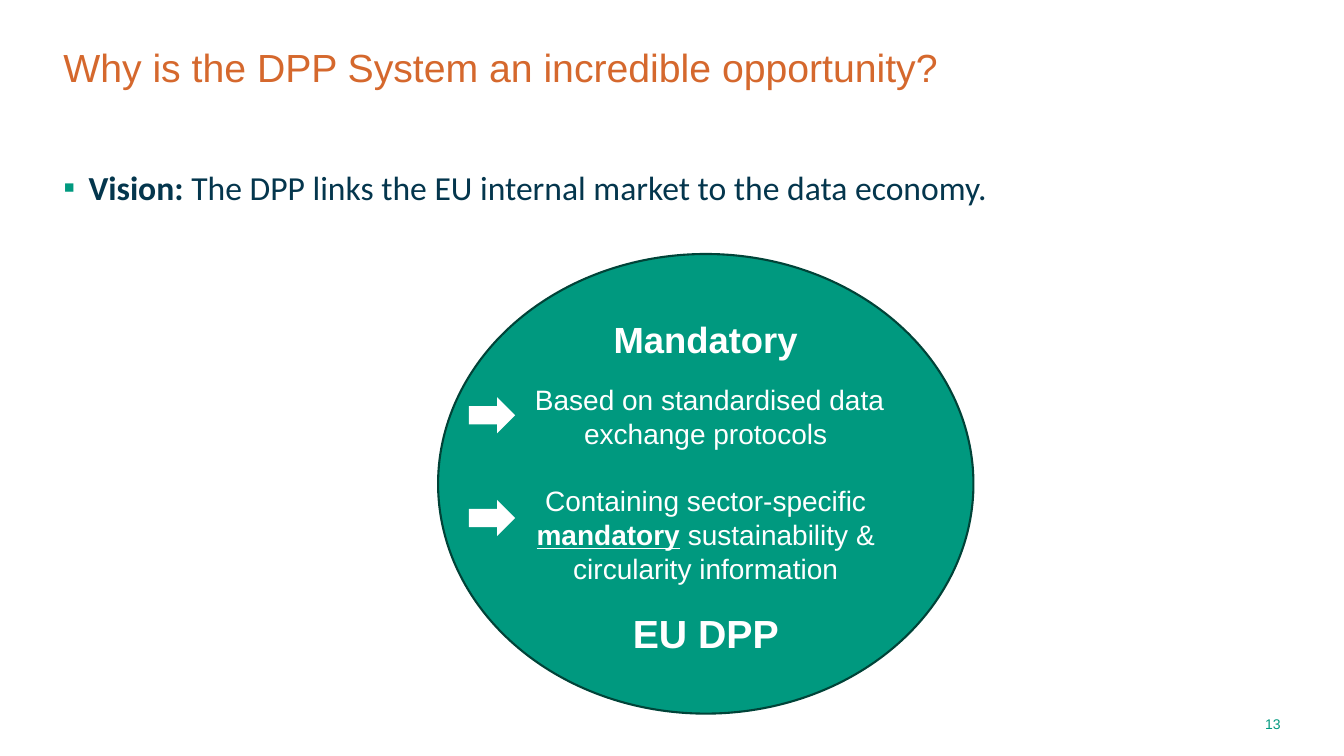
from lxml.etree import SubElement
from pptx import Presentation
from pptx.dml.color import RGBColor
from pptx.enum.shapes import MSO_SHAPE as Shape
from pptx.enum.text import MSO_ANCHOR as Anchor, PP_ALIGN as Align
from pptx.oxml.ns import qn
from pptx.util import Inches, Pt

WIDE, HIGH = 13.33, 7.5
GREEN, DARK, WHITE = "00997F", "004338", "FFFFFF"
ORANGE, NAVY = "D5682D", "04364D"
EDGE, RIGHT = 0.53, 12.8
MID = 7.0
BOLD = {"bold": True}
LINK = {"bold": True, "underline": True}

TITLE = [[("Why is the DPP System an incredible opportunity?", {})]]
VISION = [[("Vision:", BOLD),
           (" The DPP links the EU internal market to the data economy.", {})]]
POINTS = [
    [(" Based on standardised data exchange protocols", {})],
    [("Containing sector-specific ", {}), ("mandatory", LINK),
     (" sustainability & circularity information", {})],
]
PAGE = [[("13", {})]]
HEADS = [("Mandatory", 26, 3.1, 3.78), ("EU DPP", 28, 6.0, 3.2)]
ARROWS = {"left": 4.65, "top": 3.94, "step": 1.02, "size": (0.46, 0.36)}


def color(code):
    """Turn a hex string into a colour."""
    return RGBColor.from_string(code)


def write(shape, paras, size, code, face="Arial", align=Align.LEFT,
          anchor=Anchor.TOP, line=None, gap=0):
    """Fill a shape with formatted paragraphs."""
    frame = shape.text_frame
    frame.word_wrap, frame.vertical_anchor = True, anchor
    for row, runs in enumerate(paras):
        para = frame.add_paragraph() if row else frame.paragraphs[0]
        para.alignment = align
        if line:
            para.line_spacing = line
        if row:
            para.space_before = Pt(gap)
        for text, extra in runs:
            run = para.add_run()
            run.text = text
            run.font.color.rgb = color(code)
            look = {"name": face, "size": Pt(size), **extra}
            for key, value in look.items():
                setattr(run.font, key, value)
    return frame


def label(slide, box, *args, **look):
    """Add a text box with formatted paragraphs."""
    return write(slide.shapes.add_textbox(*map(Inches, box)), *args, **look)


def solid(slide, kind, box, fill, edge=None):
    """Add a filled preset shape."""
    shape = slide.shapes.add_shape(kind, *map(Inches, box))
    shape.shadow.inherit = False
    shape.fill.solid()
    shape.fill.fore_color.rgb = color(fill)
    if edge:
        shape.line.color.rgb = color(edge)
        shape.line.width = Pt(1.5)
    else:
        shape.line.fill.background()
    return shape


def bullet(para, mark, code, indent):
    """Give a paragraph a coloured hanging bullet."""
    props = para._p.get_or_add_pPr()
    props.set("marL", str(Inches(indent)))
    props.set("indent", str(-Inches(indent)))
    tint = SubElement(props, qn("a:buClr"))
    SubElement(tint, qn("a:srgbClr")).set("val", code)
    SubElement(props, qn("a:buFont")).set("typeface", "Arial")
    SubElement(props, qn("a:buChar")).set("char", mark)


def main():
    """Build and save the slide."""
    deck = Presentation()
    deck.slide_width, deck.slide_height = Inches(WIDE), Inches(HIGH)
    slide = deck.slides.add_slide(deck.slide_layouts[6])

    label(slide, (RIGHT - 0.48, 7.06, 0.48, 0.25), PAGE, 10, GREEN,
          align=Align.RIGHT, anchor=Anchor.MIDDLE)
    label(slide, (EDGE, 0.43, 9.95, 0.92), TITLE, 28, ORANGE, line=0.9)
    body = label(slide, (EDGE, 1.65, RIGHT - EDGE, 0.46), VISION, 24, NAVY,
                 face="Calibri", line=0.9)
    bullet(body.paragraphs[0], "▪", GREEN, 0.25)

    wide = 5.31
    disc = solid(slide, Shape.OVAL, (MID - wide / 2, 2.52, wide, 4.56),
                 GREEN, DARK)
    write(disc, POINTS, 20, WHITE, align=Align.CENTER,
          anchor=Anchor.MIDDLE, gap=24)
    for text, size, top, span in HEADS:
        label(slide, (MID - span / 2, top, span, 0.67), [[(text, BOLD)]],
              size, WHITE, align=Align.CENTER)
    for row in range(len(POINTS)):
        top = ARROWS["top"] + row * ARROWS["step"]
        solid(slide, Shape.RIGHT_ARROW,
              (ARROWS["left"], top, *ARROWS["size"]), WHITE)
    deck.save("out.pptx")


if __name__ == "__main__":
    main()
